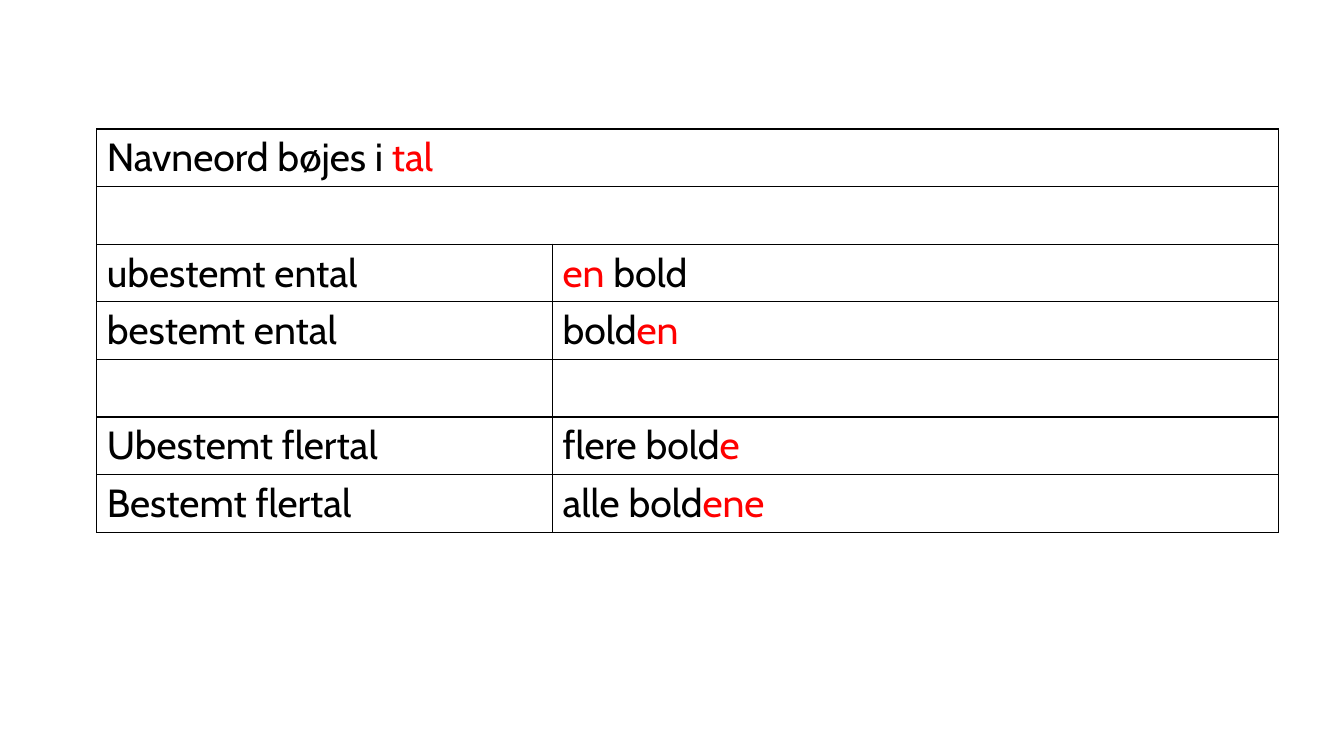
from lxml import etree
from pptx import Presentation
from pptx.dml.color import RGBColor
from pptx.oxml.ns import qn
from pptx.util import Inches, Pt

BLACK = RGBColor(0x00, 0x00, 0x00)
RED = RGBColor(0xFF, 0x00, 0x00)
FONT = "Cabin"
COL_WIDTHS = (4.52, 7.2)
ROW_HEIGHT = 0.57

# Each cell is a list of (text, colour) runs
ROWS = [
    ([("Navneord bøjes i", BLACK), (" tal", RED)], []),
    ([], []),
    ([("ubestemt ental", BLACK)], [("en", RED), (" bold", BLACK)]),
    ([("bestemt ental", BLACK)], [("bold", BLACK), ("en", RED)]),
    ([], []),
    ([("Ubestemt flertal", BLACK)], [("flere bold", BLACK), ("e", RED)]),
    ([("Bestemt flertal", BLACK)], [("alle bold", BLACK), ("ene", RED)]),
]
FULL_WIDTH_ROWS = (0, 1)


def add_run(p, text, color=BLACK, size=28):
    r = p.add_run()
    r.text = text
    r.font.name = FONT
    r.font.size = Pt(size)
    r.font.color.rgb = color


def set_borders(cell, color=BLACK, width=1):
    tcPr = cell._tc.get_or_add_tcPr()
    for i, side in enumerate(("a:lnL", "a:lnR", "a:lnT", "a:lnB")):
        ln = etree.Element(qn(side), w=str(Pt(width)))
        fill = etree.SubElement(ln, qn("a:solidFill"))
        etree.SubElement(fill, qn("a:srgbClr"), val=str(color))
        tcPr.insert(i, ln)


prs = Presentation()
prs.slide_width, prs.slide_height = Inches(13.33), Inches(7.5)
s = prs.slides.add_slide(prs.slide_layouts[6])

# Table grid
table = s.shapes.add_table(
    len(ROWS), len(COL_WIDTHS), Inches(0.96), Inches(1.28),
    Inches(sum(COL_WIDTHS)), Inches(ROW_HEIGHT * len(ROWS))).table
table.first_row = False
table.horz_banding = False
for column, width in zip(table.columns, COL_WIDTHS):
    column.width = Inches(width)
for row in table.rows:
    row.height = Inches(ROW_HEIGHT)

# Heading rows span both columns
for i in FULL_WIDTH_ROWS:
    table.cell(i, 0).merge(table.cell(i, 1))

# Cell text, fill and borders
for i, row in enumerate(ROWS):
    for j, runs in enumerate(row):
        cell = table.cell(i, j)
        cell.fill.background()
        set_borders(cell)
        for text, color in runs:
            add_run(cell.text_frame.paragraphs[0], text, color=color)

prs.save("out.pptx")
